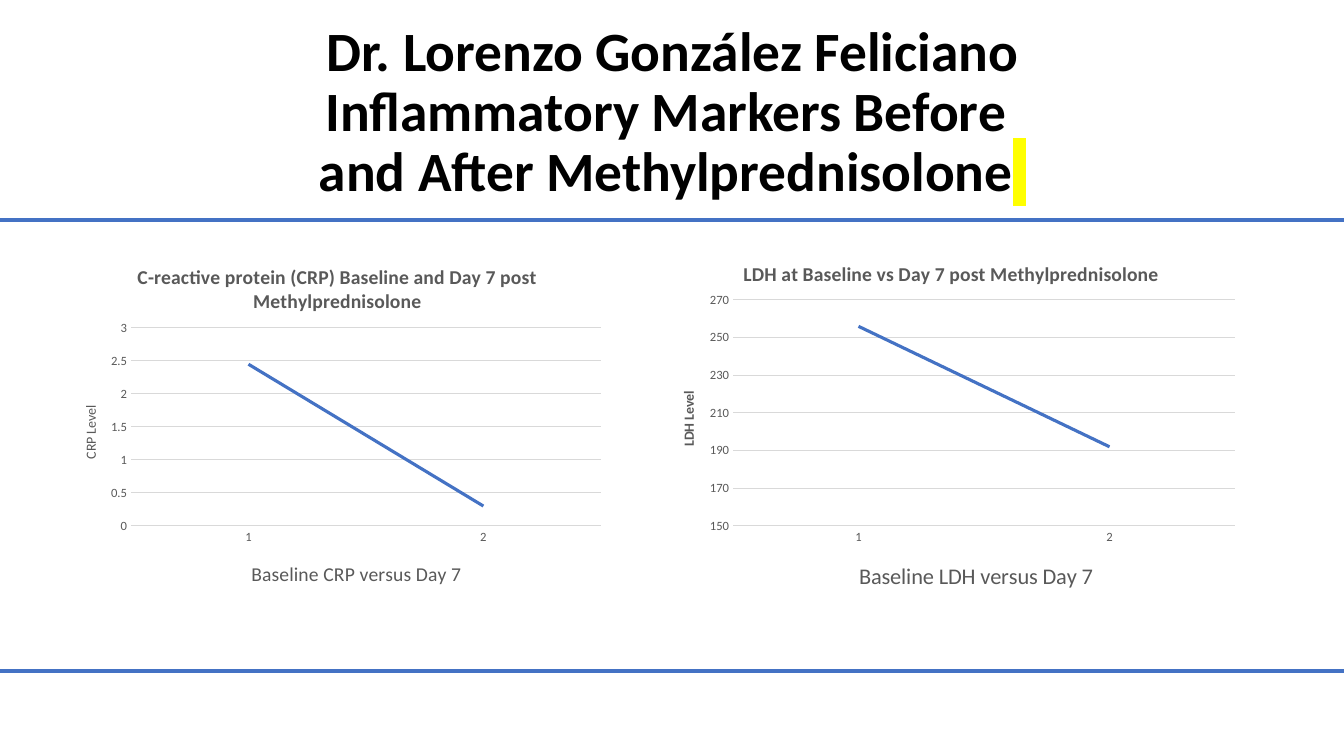
import lxml.etree
import pptx
import pptx.chart.data
import pptx.dml.color
import pptx.enum.chart
import pptx.enum.shapes
import pptx.enum.text
import pptx.oxml.ns
import pptx.util

Pt = pptx.util.Pt
qn = pptx.oxml.ns.qn

FONT = "Calibri"
BLUE, GREY, GRID, BLACK = "4472C4", "595959", "D9D9D9", "000000"
SLIDE_SIZE = (960, 540)
HEADING = ("Dr. Lorenzo González Feliciano\vInflammatory Markers Before \v"
           "and After Methylprednisolone")
HEADING_BOX = (66.24, 28.8, 828, 104.4)
RULE_LEFT, RULE_RIGHT = -5.76, 969.84
RULE_TOPS = (156.96, 479.52)

CHARTS = [
    {
        "title": "LDH at Baseline vs Day 7 post Methylprednisolone",
        "category_title": "Baseline LDH versus Day 7",
        "value_title": "LDH Level",
        "category_size": 16, "value_bold": True,
        "values": (256, 192), "scale": (150, 270, 20),
        "box": (467.28, 170.64, 424.08, 262.8),
        "plot": (523.6, 214.3, 358.6, 161.4),
        "title_at": (528.5, 183), "category_at": (610.7, 397.5),
        "value_at": (483.5, 277.5),
    },
    {
        "title": "C-reactive protein (CRP) Baseline and Day 7 post Methylprednisolone",
        "category_title": "Baseline CRP versus Day 7",
        "value_title": "CRP Level",
        "category_size": 14, "value_bold": False,
        "values": (2.45, 0.3), "scale": (0, 3, 0.5),
        "box": (40.32, 173.52, 396.72, 257.04),
        "plot": (93.6, 234.3, 335.7, 141.4),
        "title_at": (95.7, 185.7), "category_at": (177, 397.5),
        "value_at": (56.5, 288),
    },
]


def color(value):
    return pptx.dml.color.RGBColor.from_string(value)


def write(frame, text, *, size, fill=GREY, bold=False, spacing=None, marker=None):
    frame.text = text
    paragraph = frame.paragraphs[0]
    paragraph.alignment = pptx.enum.text.PP_ALIGN.CENTER
    if spacing:
        paragraph.line_spacing = spacing
    if marker:
        paragraph.add_run().text = " "
    for run in paragraph.runs:
        run.font.size = Pt(size)
        run.font.bold = bold
        run.font.name = FONT
        run.font.color.rgb = color(fill)
    if marker:
        highlight = lxml.etree.Element(qn("a:highlight"))
        lxml.etree.SubElement(highlight, qn("a:srgbClr"), val=marker)
        properties = paragraph.runs[-1].font._element
        properties.find(qn("a:solidFill")).addnext(highlight)


def place(parent, chart_box, target, inner=False):
    layout = parent.find(qn("c:layout"))
    if layout is None:
        layout = lxml.etree.Element(qn("c:layout"))
        parent.insert(0, layout)
    manual = lxml.etree.SubElement(layout, qn("c:manualLayout"))
    left, top, width, height = chart_box
    settings = [("layoutTarget", "inner")] if inner else []
    settings += [("xMode", "edge"), ("yMode", "edge"),
                 ("x", (target[0] - left) / width), ("y", (target[1] - top) / height)]
    if inner:
        settings += [("w", target[2] / width), ("h", target[3] / height)]
    for name, value in settings:
        lxml.etree.SubElement(manual, qn("c:" + name), val=str(value))


def style_axis(axis):
    axis.major_tick_mark = pptx.enum.chart.XL_TICK_MARK.NONE
    axis.minor_tick_mark = pptx.enum.chart.XL_TICK_MARK.NONE
    font = axis.tick_labels.font
    font.size, font.name = Pt(9), FONT
    font.color.rgb = color(GREY)


def style_line(line, fill, width):
    line.color.rgb = color(fill)
    line.width = Pt(width)


def add_line_chart(slide, content):
    box = content["box"]
    data = pptx.chart.data.CategoryChartData()
    data.categories = ["1", "2"]
    data.add_series("Series 1", content["values"])
    chart = slide.shapes.add_chart(
        pptx.enum.chart.XL_CHART_TYPE.LINE, *map(Pt, box), data).chart
    chart.has_legend = False
    chart.font.size, chart.font.name = Pt(10), FONT
    chart.font.color.rgb = color(BLACK)
    category, value = chart.category_axis, chart.value_axis
    style_axis(category)
    style_axis(value)
    style_line(category.format.line, GRID, 0.75)
    value.format.line.fill.background()
    value.has_major_gridlines = True
    style_line(value.major_gridlines.format.line, GRID, 0.75)
    value.minimum_scale, value.maximum_scale, value.major_unit = content["scale"]
    series = chart.plots[0].series[0]
    series.smooth = False
    series.marker.style = pptx.enum.chart.XL_MARKER_STYLE.NONE
    style_line(series.format.line, BLUE, 2.25)
    chart.plots[0].vary_by_categories = False

    titles = [
        (chart.chart_title, "title", 14, True),
        (category.axis_title, "category", content["category_size"], False),
        (value.axis_title, "value", 10, content["value_bold"]),
    ]
    for title, name, size, bold in titles:
        text = content["title" if name == "title" else name + "_title"]
        write(title.text_frame, text, size=size, bold=bold)
        place(title._element, box, content[name + "_at"])
    body = value.axis_title._element.find(".//" + qn("a:bodyPr"))
    body.set("rot", "-5400000")
    body.set("vert", "horz")
    place(chart._chartSpace.find(".//" + qn("c:plotArea")), box, content["plot"], inner=True)


def add_rule(slide, top):
    rule = slide.shapes.add_connector(
        pptx.enum.shapes.MSO_CONNECTOR.STRAIGHT,
        Pt(RULE_LEFT), Pt(top), Pt(RULE_RIGHT), Pt(top))
    style_line(rule.line, BLUE, 3)
    lxml.etree.SubElement(rule._element.spPr, qn("a:effectLst"))


def main():
    presentation = pptx.Presentation()
    presentation.slide_width, presentation.slide_height = map(Pt, SLIDE_SIZE)
    slide = presentation.slides.add_slide(presentation.slide_layouts[6])
    frame = slide.shapes.add_textbox(*map(Pt, HEADING_BOX)).text_frame
    frame.word_wrap = True
    frame.vertical_anchor = pptx.enum.text.MSO_ANCHOR.MIDDLE
    write(frame, HEADING, size=39.6, fill=BLACK, bold=True, spacing=0.9, marker="FFFF00")
    for content in CHARTS:
        add_line_chart(slide, content)
    for top in RULE_TOPS:
        add_rule(slide, top)
    presentation.save("out.pptx")


if __name__ == "__main__":
    main()
